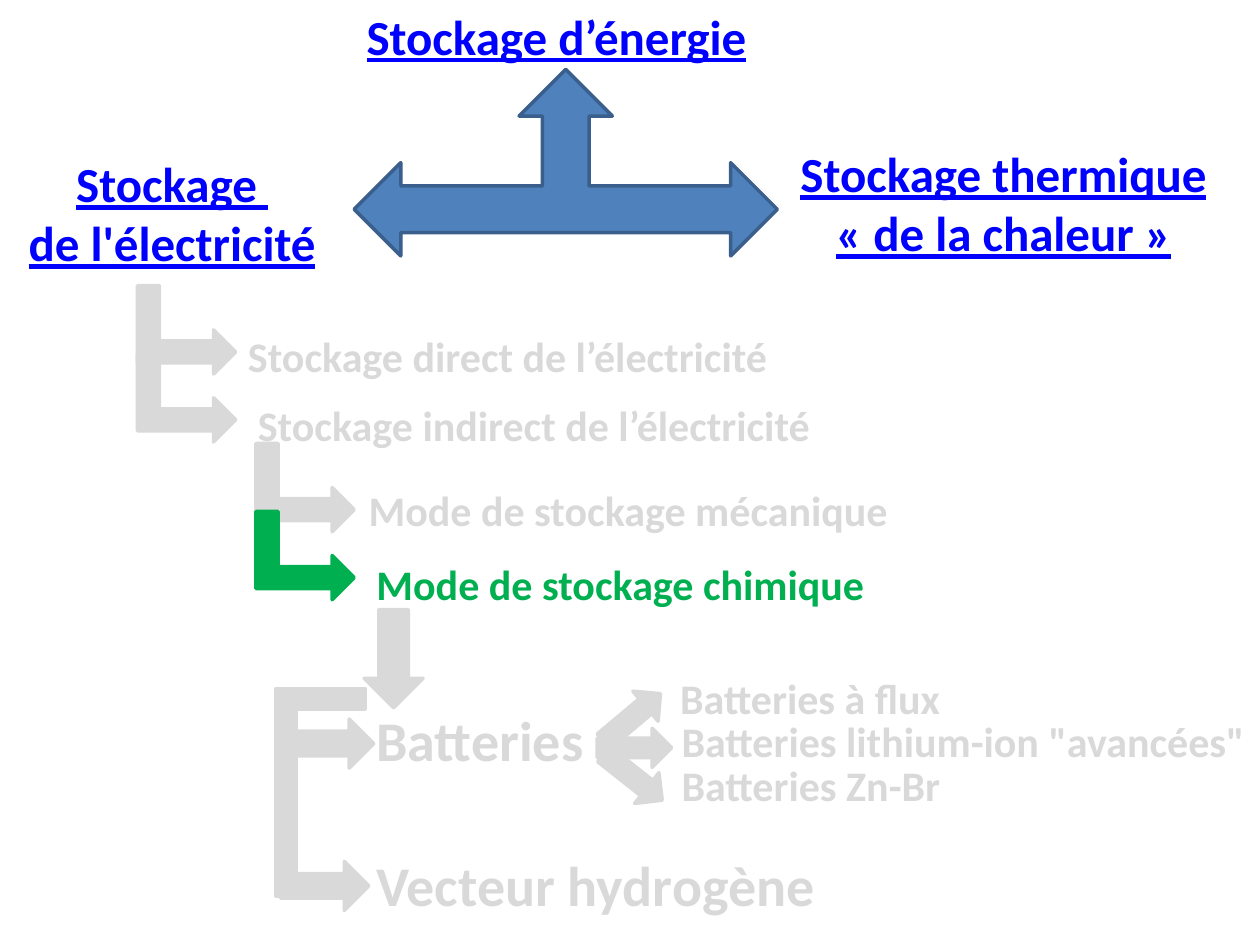
from pptx import Presentation
from pptx.dml.color import RGBColor
from pptx.enum.shapes import MSO_SHAPE
from pptx.enum.text import MSO_AUTO_SIZE, PP_ALIGN
from pptx.util import Cm, Pt

COLORS = {"blue": "4F81BD", "outline": "3A5F8C", "title": "0000FF",
          "grey": "D9D9D9", "green": "00B050"}

HEADINGS = [
    ("Stockage d’énergie", 7.14, 0, 8.33, 1.45, PP_ALIGN.LEFT),
    ("Stockage \nde l'électricité", -0.2, 2.97, 7.34, 2.64, PP_ALIGN.CENTER),
    ("Stockage thermique « de la chaleur »", 15.67, 2.77, 9.12, 2.64, PP_ALIGN.CENTER),
]
ENTRIES = [
    ("Stockage direct de l’électricité", 4.75, 6.53, 11.71, 24, "grey"),
    ("Stockage indirect de l’électricité", 4.95, 7.92, 12.5, 24, "grey"),
    (" Mode de stockage mécanique", 6.99, 9.65, 11.46, 24, "grey"),
    ("Mode de stockage chimique", 7.34, 11.13, 10.92, 24, "green"),
    ("Batteries", 7.34, 14.1, 5.16, 32, "grey"),
    ("Vecteur hydrogène", 7.34, 17.02, 9.53, 32, "grey"),
    ("Batteries à flux", 13.46, 13.44, 5.94, 24, "grey"),
    ("Batteries lithium-ion \"avancées\"", 13.49, 14.3, 11.91, 24, "grey"),
    ("Batteries Zn-Br", 13.49, 15.19, 6.55, 24, "grey"),
]
BRANCH_STEP = 1.37
BRANCHES = [(2.87, 5.66, ("grey", "grey")), (5.26, 8.84, ("grey", "green"))]
BARS = [(5.56, 13.89, 0.41, 4.17), (5.77, 13.89, 1.6, 0.41)]
POINTERS = [(6.15, 14.1), (6.05, 16.97)]
FAN = [(12.04, 14.68, 180), (11.99, 14.07, 140), (12.01, 15.27, 218.3)]


def add_text(page, text, left, top, width, height, size, color, align=PP_ALIGN.LEFT, underline=None):
    box = page.shapes.add_textbox(Cm(left), Cm(top), Cm(width), Cm(height))
    frame = box.text_frame
    frame.word_wrap = True
    frame.auto_size = MSO_AUTO_SIZE.SHAPE_TO_FIT_TEXT
    frame.text = text
    for paragraph in frame.paragraphs:
        paragraph.alignment = align
        for span in paragraph.runs:
            span.font.name = "Calibri"
            span.font.size = Pt(size)
            span.font.bold = True
            span.font.underline = underline
            span.font.color.rgb = RGBColor.from_string(COLORS[color])


def add_figure(page, kind, left, top, width, height, color="grey", line=None, rotation=0):
    figure = page.shapes.add_shape(kind, Cm(left), Cm(top), Cm(width), Cm(height))
    figure.shadow.inherit = False
    figure.rotation = rotation
    figure.fill.solid()
    figure.fill.fore_color.rgb = RGBColor.from_string(COLORS[color])
    figure.line.color.rgb = RGBColor.from_string(COLORS[line or color])
    figure.line.width = Pt(2)


def main():
    deck = Presentation()
    deck.slide_width, deck.slide_height = Cm(25.4), Cm(19.05)
    page = deck.slides.add_slide(deck.slide_layouts[6])

    add_figure(page, MSO_SHAPE.LEFT_RIGHT_UP_ARROW, 7.14, 1.4, 8.53, 3.76, "blue", "outline")
    for left, top, colors in BRANCHES:
        for index, color in enumerate(colors):
            add_figure(page, MSO_SHAPE.BENT_UP_ARROW, left, top + index * BRANCH_STEP,
                       1.78, 1.98, color, rotation=90)
    add_figure(page, MSO_SHAPE.DOWN_ARROW, 7.34, 12.29, 1.19, 1.98)
    for bar in BARS:
        add_figure(page, MSO_SHAPE.RECTANGLE, *bar)
    for left, top in POINTERS:
        add_figure(page, MSO_SHAPE.UP_ARROW, left, top, 0.99, 1.78, rotation=90)
    for left, top, rotation in FAN:
        add_figure(page, MSO_SHAPE.LEFT_ARROW, left, top, 1.5, 0.79, rotation=rotation)

    for text, left, top, width, height, align in HEADINGS:
        add_text(page, text, left, top, width, height, 28, "title", align, True)
    for text, left, top, width, size, color in ENTRIES:
        height = 1.27 if size == 24 else 1.63
        add_text(page, text, left, top, width, height, size, color)

    deck.save("out.pptx")


if __name__ == "__main__":
    main()
